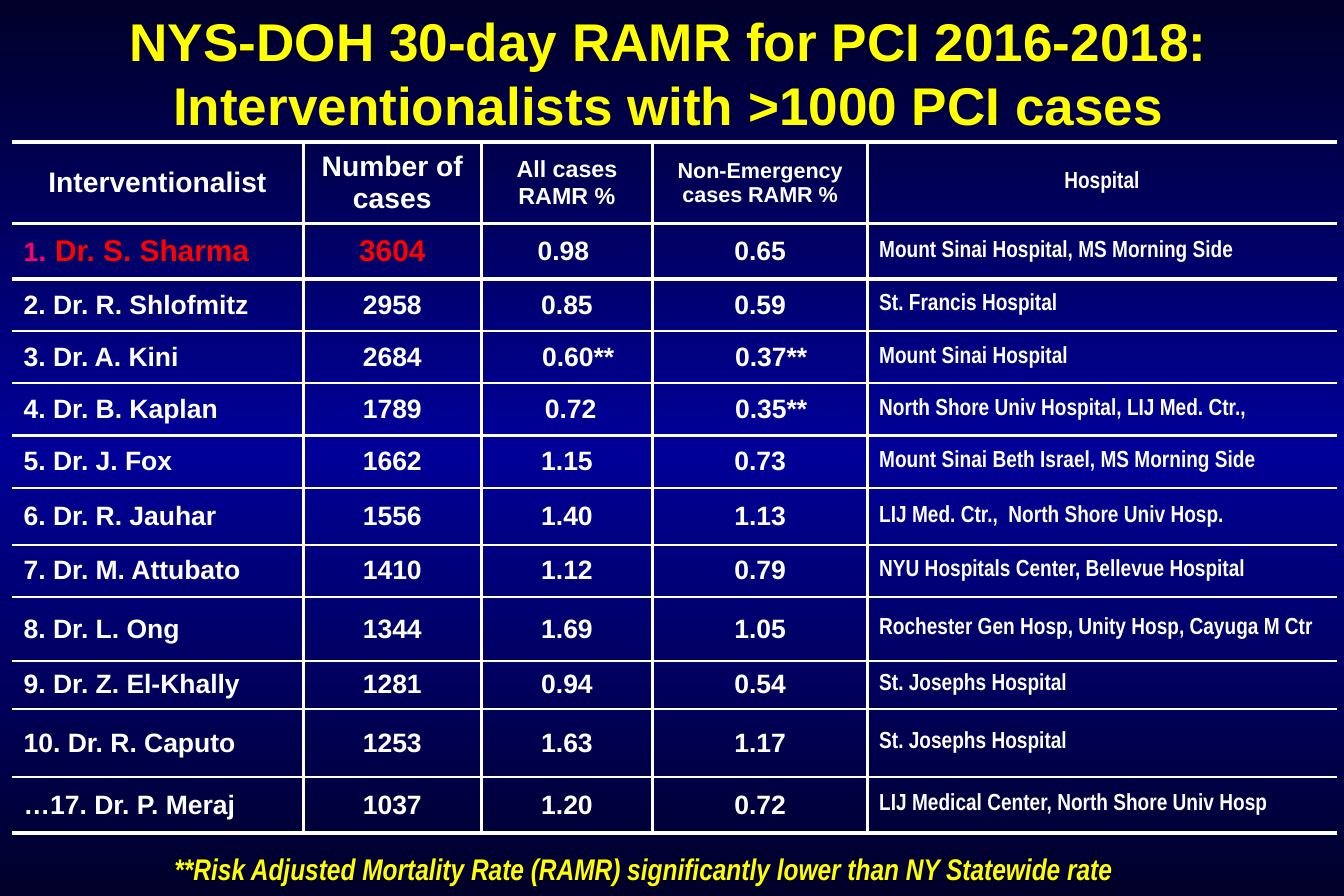
from copy import deepcopy

from lxml import etree
from pptx import Presentation
from pptx.dml.color import RGBColor
from pptx.enum.text import MSO_ANCHOR, PP_ALIGN
from pptx.oxml.ns import qn
from pptx.util import Cm, Pt

LEFT = PP_ALIGN.LEFT
CENTER = PP_ALIGN.CENTER
MIDDLE = MSO_ANCHOR.MIDDLE

WHITE, YELLOW, RED, PINK = "FFFFFF", "FFFF00", "FF0000", "FF0066"
NAVY, BLUE = "000028", "000099"
SANS, NARROW = "Arial", "Arial Narrow"

SIDE_MARGIN = 0.25
ONE_SPACE = 0.16
THICK, THIN = 2.25, 1.5

COLUMN_WIDTHS = [6.2, 3.78, 3.65, 4.56, 9.98]
ROW_HEIGHTS = [1.74, 1.17, 1.11, 1.11, 1.11, 1.11, 1.21, 1.11, 1.36, 1.02, 1.45, 1.19]
HEADER_SIZES = [17, 17, 14, 13, 14]
BODY_SIZES = [16, 16, 16, 16, 14]

ROWS = [
    ("Interventionalist", "Number of cases", "All cases RAMR %",
     "Non-Emergency cases RAMR %", "Hospital"),
    ("1. Dr. S. Sharma", "3604", "0.98", "0.65", "Mount Sinai Hospital, MS Morning Side"),
    ("2. Dr. R. Shlofmitz", "2958", "0.85", "0.59", "St. Francis Hospital"),
    ("3. Dr. A. Kini", "2684", "0.60**", "0.37**", "Mount Sinai Hospital"),
    ("4. Dr. B. Kaplan", "1789", "0.72", "0.35**", "North Shore Univ Hospital, LIJ Med. Ctr.,"),
    ("5. Dr. J. Fox", "1662", "1.15", "0.73", "Mount Sinai Beth Israel, MS Morning Side"),
    ("6. Dr. R. Jauhar", "1556", "1.40", "1.13", "LIJ Med. Ctr.,  North Shore Univ Hosp."),
    ("7. Dr. M. Attubato", "1410", "1.12", "0.79", "NYU Hospitals Center, Bellevue Hospital"),
    ("8. Dr. L. Ong", "1344", "1.69", "1.05", "Rochester Gen Hosp, Unity Hosp, Cayuga M Ctr"),
    ("9. Dr. Z. El-Khally", "1281", "0.94", "0.54", "St. Josephs Hospital"),
    ("10. Dr. R. Caputo", "1253", "1.63", "1.17", "St. Josephs Hospital"),
    ("…17. Dr. P. Meraj", "1037", "1.20", "0.72", "LIJ Medical Center, North Shore Univ Hosp"),
]

LEADER_RUNS = [("1", 16, PINK), (". ", 18, PINK), ("Dr. S. Sharma", 18, RED)]


def rgb(color):
    return RGBColor.from_string(color)


def format_run(run, size, color, font=SANS, italic=False):
    run.font.name = font
    run.font.size = Pt(size)
    run.font.bold = True
    run.font.italic = italic
    run.font.color.rgb = rgb(color)


def paint_background(slide):
    fill = slide.background.fill
    fill.gradient()
    fill.gradient_angle = 90
    stop_list = slide.element.find(".//" + qn("a:gsLst"))
    stop_list.insert(1, deepcopy(stop_list[0]))
    for stop, position, color in zip(fill.gradient_stops, (0, 0.5, 1), (NAVY, BLUE, NAVY)):
        stop.position = position
        stop.color.rgb = rgb(color)


def add_text(slide, text, left, top, width, height, size, font, italic=False, right_margin=SIDE_MARGIN):
    frame = slide.shapes.add_textbox(Cm(left), Cm(top), Cm(width), Cm(height)).text_frame
    frame.word_wrap = True
    frame.margin_right = Cm(right_margin)
    frame.text = text
    paragraph = frame.paragraphs[0]
    paragraph.alignment = CENTER
    format_run(paragraph.runs[0], size, YELLOW, font, italic)


def add_border(cell, side, width):
    properties = cell._tc.get_or_add_tcPr()
    line = etree.SubElement(properties, qn("a:ln" + side), w=str(Pt(width)))
    if width:
        fill = etree.SubElement(line, qn("a:solidFill"))
        etree.SubElement(fill, qn("a:srgbClr"), val=WHITE)
    else:
        etree.SubElement(line, qn("a:noFill"))


def horizontal_width(boundary):
    return THICK if boundary in (0, 1, 2, len(ROWS)) else THIN


def frame_cell(cell, row, column):
    add_border(cell, "L", THICK if column else 0)
    add_border(cell, "R", THICK if column < len(COLUMN_WIDTHS) - 1 else 0)
    add_border(cell, "T", horizontal_width(row))
    add_border(cell, "B", horizontal_width(row + 1))
    cell.fill.background()


def fill_cell(cell, row, column, text):
    cell.vertical_anchor = MIDDLE
    paragraph = cell.text_frame.paragraphs[0]
    paragraph.alignment = CENTER if row == 0 or column in (1, 2, 3) else LEFT
    if (row, column) == (1, 0):
        for part, size, color in LEADER_RUNS:
            run = paragraph.add_run()
            run.text = part
            format_run(run, size, color)
        return
    paragraph.text = text
    size, color = (BODY_SIZES if row else HEADER_SIZES)[column], WHITE
    if (row, column) == (1, 1):
        size, color = 18, RED
    format_run(paragraph.runs[0], size, color, NARROW if column == 4 else SANS)
    if text.endswith("**"):
        cell.margin_left = Cm(SIDE_MARGIN + 3 * ONE_SPACE)
    elif (row, column) == (4, 2):
        cell.margin_left = Cm(SIDE_MARGIN + ONE_SPACE)
    elif (row, column) == (1, 2):
        cell.margin_right = Cm(SIDE_MARGIN + ONE_SPACE)


def add_results_table(slide):
    table = slide.shapes.add_table(
        len(ROWS), len(COLUMN_WIDTHS), Cm(0.25), Cm(3.02),
        Cm(sum(COLUMN_WIDTHS)), Cm(sum(ROW_HEIGHTS))).table
    table.first_row = False
    table.horz_banding = False
    for column, width in zip(table.columns, COLUMN_WIDTHS):
        column.width = Cm(width)
    for row, height in zip(table.rows, ROW_HEIGHTS):
        row.height = Cm(height)
    for row, texts in enumerate(ROWS):
        for column, text in enumerate(texts):
            cell = table.cell(row, column)
            frame_cell(cell, row, column)
            fill_cell(cell, row, column, text)


def main():
    presentation = Presentation()
    presentation.slide_width = Cm(28.575)
    presentation.slide_height = Cm(19.05)
    slide = presentation.slides.add_slide(presentation.slide_layouts[6])
    paint_background(slide)
    add_text(slide, "NYS-DOH 30-day RAMR for PCI 2016-2018: Interventionalists with >1000 PCI cases",
             1.47, 0.05, 25.5, 3, 32, SANS)
    add_results_table(slide)
    add_text(slide, "**Risk Adjusted Mortality Rate (RAMR) significantly lower than NY Statewide rate",
             1.68, 17.96, 25.2, 1.02, 18, NARROW, italic=True, right_margin=1.43)
    presentation.save("out.pptx")


if __name__ == "__main__":
    main()
